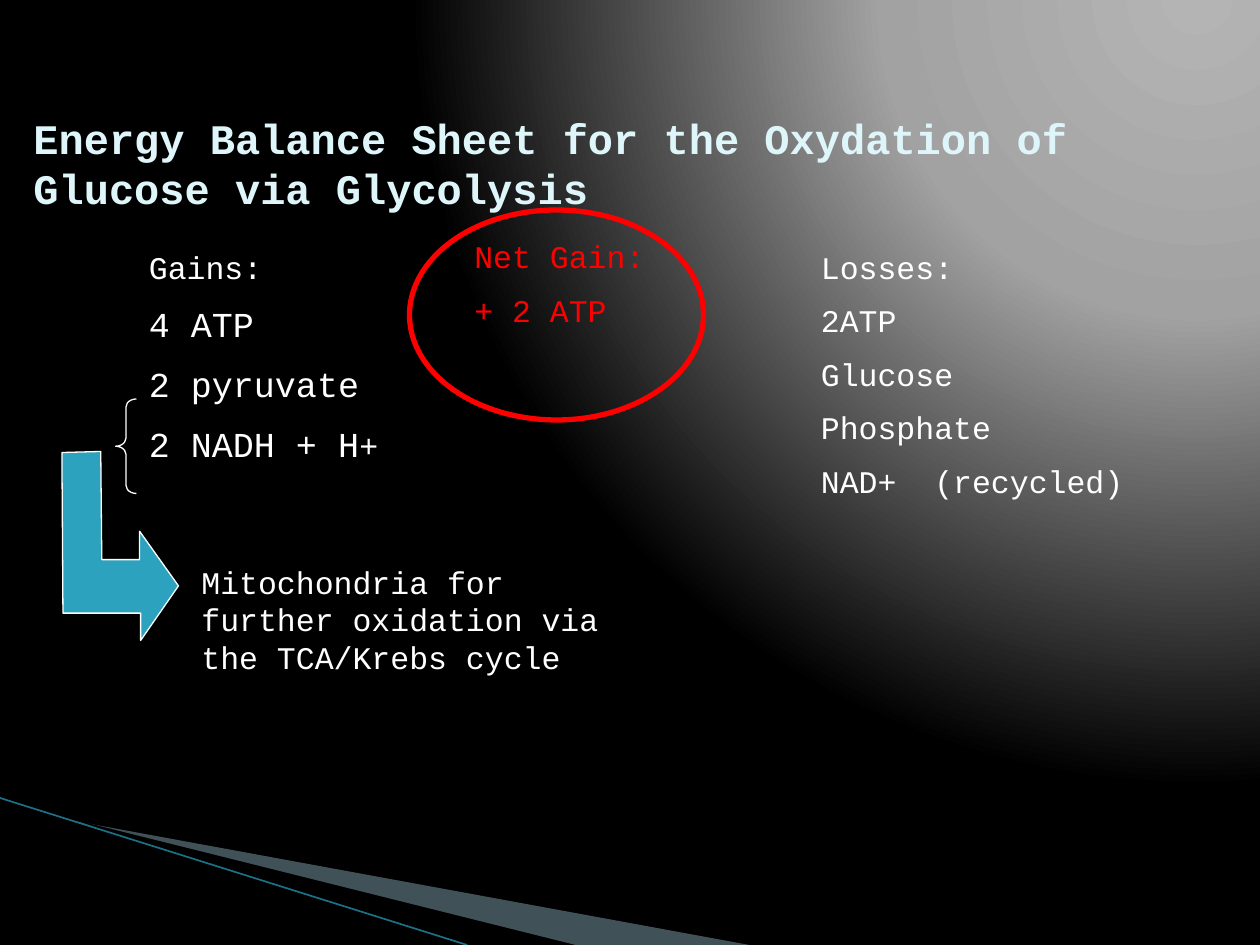
"""Build the energy balance slide for glycolysis on a grid of 120 by 90 units."""
from dataclasses import dataclass

from lxml import etree
from pptx import Presentation
from pptx.dml.color import RGBColor
from pptx.enum.shapes import MSO_CONNECTOR, MSO_SHAPE
from pptx.enum.text import MSO_ANCHOR
from pptx.oxml import parse_xml
from pptx.oxml.ns import nsdecls, qn
from pptx.util import Inches, Pt

LINE = MSO_CONNECTOR.STRAIGHT
OVAL = MSO_SHAPE.OVAL
BRACE = MSO_SHAPE.LEFT_BRACE
TOP, MIDDLE = MSO_ANCHOR.TOP, MSO_ANCHOR.MIDDLE
COLUMNS, ROWS = 120, 90


@dataclass(frozen=True)
class Theme:
    font: str = "Courier New"
    title: str = "DEF5FA"
    text: str = "FFFFFF"
    accent: str = "FF0000"
    arrow: str = "2DA2BF"
    blade: str = "A0CBDC"
    shade: str = "000000"
    stripe: str = "1B7185"
    glow: tuple = ((0, "B4B4B4"), (40, "A2A2A2"), (100, "000000"))
    title_size: int = 24
    large_size: int = 20
    body_size: int = 18


THEME = Theme()
LARGE, BODY = THEME.large_size, THEME.body_size

TITLE = "Energy Balance Sheet for the Oxydation of Glucose via Glycolysis"
GAINS = [
    [("Gains:", BODY)],
    [("4 ATP", LARGE)],
    [("2 pyruvate", LARGE)],
    [("2 NADH + H", LARGE), ("+", BODY)],
]
LOSSES = [[(item, BODY)] for item in
          ("Losses:", "2ATP", "Glucose", "Phosphate", "NAD+  (recycled)")]
DESTINATION = [[("Mitochondria for further oxidation via the TCA/Krebs cycle", BODY)]]
NET_GAIN = [[("Net Gain:", BODY)], [("+ 2 ATP", BODY)]]

TEXT_BLOCKS = [
    (GAINS, (13, 23, 30, 25)),
    (LOSSES, (77, 23, 34, 28)),
    (DESTINATION, (18, 53, 41, 16)),
]
BLADE = [(6.6, 78.1), (71.4, 90), (54.7, 90)]
SHADE = [(6.4, 77.9), (54.8, 90), (44.6, 90)]
STRIPE = [(0, 76), (44.5, 90)]
BENT_ARROW = [(17, 55.8), (13.3, 50.6), (13.3, 53.3), (9.7, 53.3), (9.6, 43),
              (5.9, 43.1), (6, 58.4), (13.4, 58.4), (13.4, 61)]

deck = Presentation()
deck.slide_width, deck.slide_height = Inches(10), Inches(7.5)
UNIT = deck.slide_width // COLUMNS
page = deck.slides.add_slide(deck.slide_layouts[6])


def grid(*lengths):
    return [round(length * UNIT) for length in lengths]


def color(value):
    return RGBColor.from_string(value)


def paint_background():
    page.background.fill.gradient()
    old = page.element.find(".//" + qn("a:gradFill"))
    stops = "".join(
        f'<a:gs pos="{place * 1000}"><a:srgbClr val="{value}"/></a:gs>'
        for place, value in THEME.glow)
    old.getparent().replace(old, parse_xml(
        f'<a:gradFill rotWithShape="1" {nsdecls("a")}><a:gsLst>{stops}</a:gsLst>'
        '<a:path path="circle"><a:fillToRect l="95000" t="-106000" r="5000" b="206000"/>'
        '</a:path></a:gradFill>'))


def style(shape, fill=None, line=None, width=0.75):
    shape.shadow.inherit = False
    if fill:
        shape.fill.solid()
        shape.fill.fore_color.rgb = color(fill)
    else:
        shape.fill.background()
    if line:
        shape.line.color.rgb = color(line)
        shape.line.width = Pt(width)
    else:
        shape.line.fill.background()
    return shape


def add_outline(points, **look):
    corners = [grid(*point) for point in points]
    builder = page.shapes.build_freeform(*corners[0])
    builder.add_line_segments(corners[1:], close=True)
    return style(builder.convert_to_shape(), **look)


def add_text(shapes, paragraphs, area, ink=THEME.text, bold=False, anchor=TOP):
    frame = shapes.add_textbox(*grid(*area)).text_frame
    frame.word_wrap = True
    frame.vertical_anchor = anchor
    for index, spans in enumerate(paragraphs):
        para = frame.add_paragraph() if index else frame.paragraphs[0]
        if index:
            para.space_before = Pt(spans[0][1] / 2)
        for words, size in spans:
            span = para.add_run()
            span.text = words
            span.font.name = THEME.font
            span.font.size = Pt(size)
            span.font.bold = bold
            span.font.color.rgb = color(ink)


def add_stripe():
    start, end = STRIPE
    stripe = page.shapes.add_connector(LINE, *grid(*start, *end))
    stripe.line.color.rgb = color(THEME.stripe)
    stripe.line.width = Pt(0.95)
    etree.SubElement(stripe.element.spPr, qn("a:effectLst"))


def main():
    paint_background()
    blade = add_outline(BLADE, fill=THEME.blade)
    tint = blade.element.spPr.find(".//" + qn("a:srgbClr"))
    etree.SubElement(tint, qn("a:alpha")).set("val", "40000")
    add_outline(SHADE, fill=THEME.shade)
    add_stripe()

    add_text(page.shapes, [[(TITLE, THEME.title_size)]], (2, 8, 118, 15),
             ink=THEME.title, bold=True, anchor=MIDDLE)
    for paragraphs, area in TEXT_BLOCKS:
        add_text(page.shapes, paragraphs, area)

    add_outline(BENT_ARROW, fill=THEME.arrow, line=THEME.text)
    brace = style(page.shapes.add_shape(BRACE, *grid(11, 38, 2, 9)), line=THEME.text)
    brace.adjustments[0] = 0.38

    result = page.shapes.add_group_shape()
    add_text(result.shapes, NET_GAIN, (44, 22, 30, 13), ink=THEME.accent)
    style(result.shapes.add_shape(OVAL, *grid(39, 20, 28, 20)),
          line=THEME.accent, width=3)
    deck.save("out.pptx")


if __name__ == "__main__":
    main()
